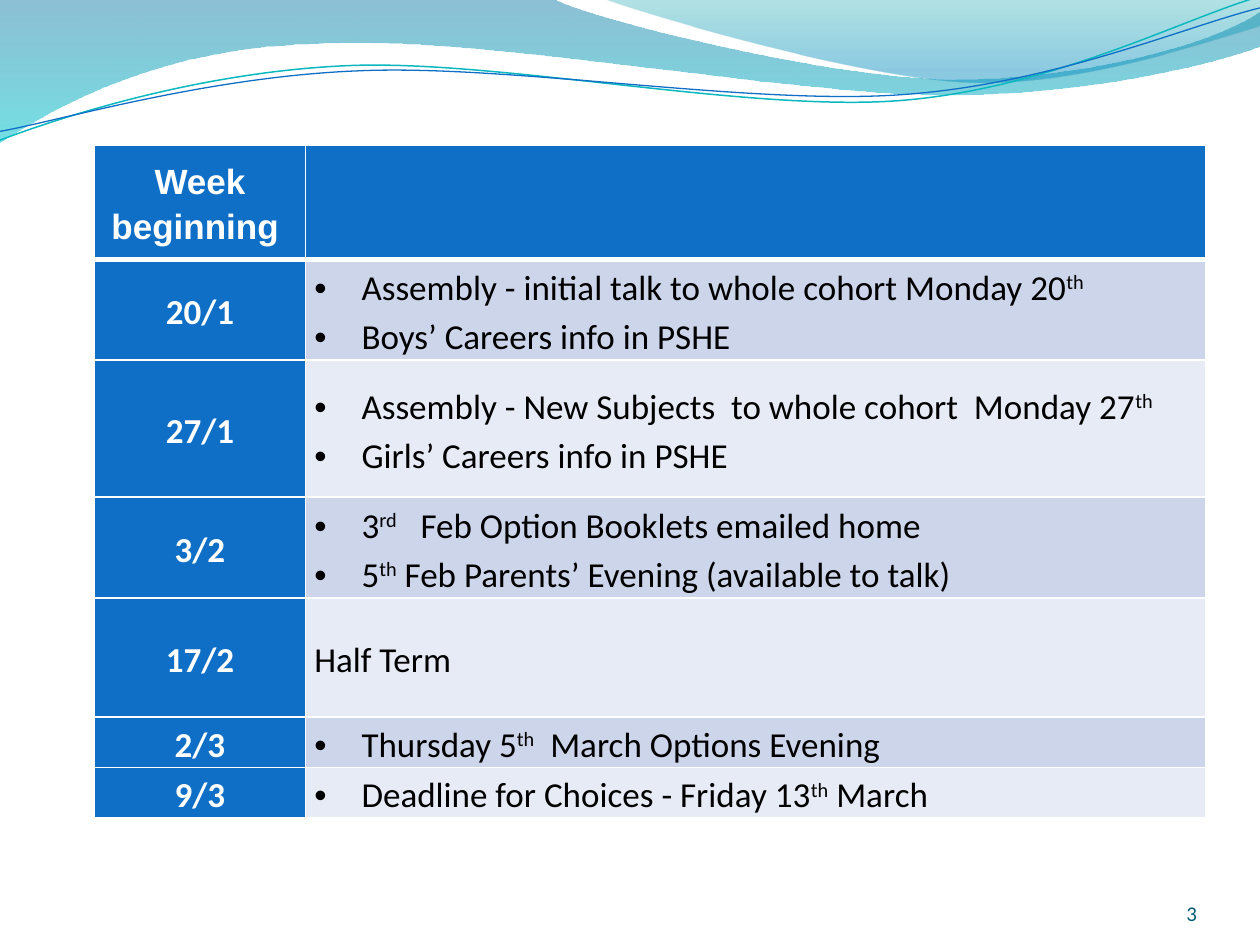
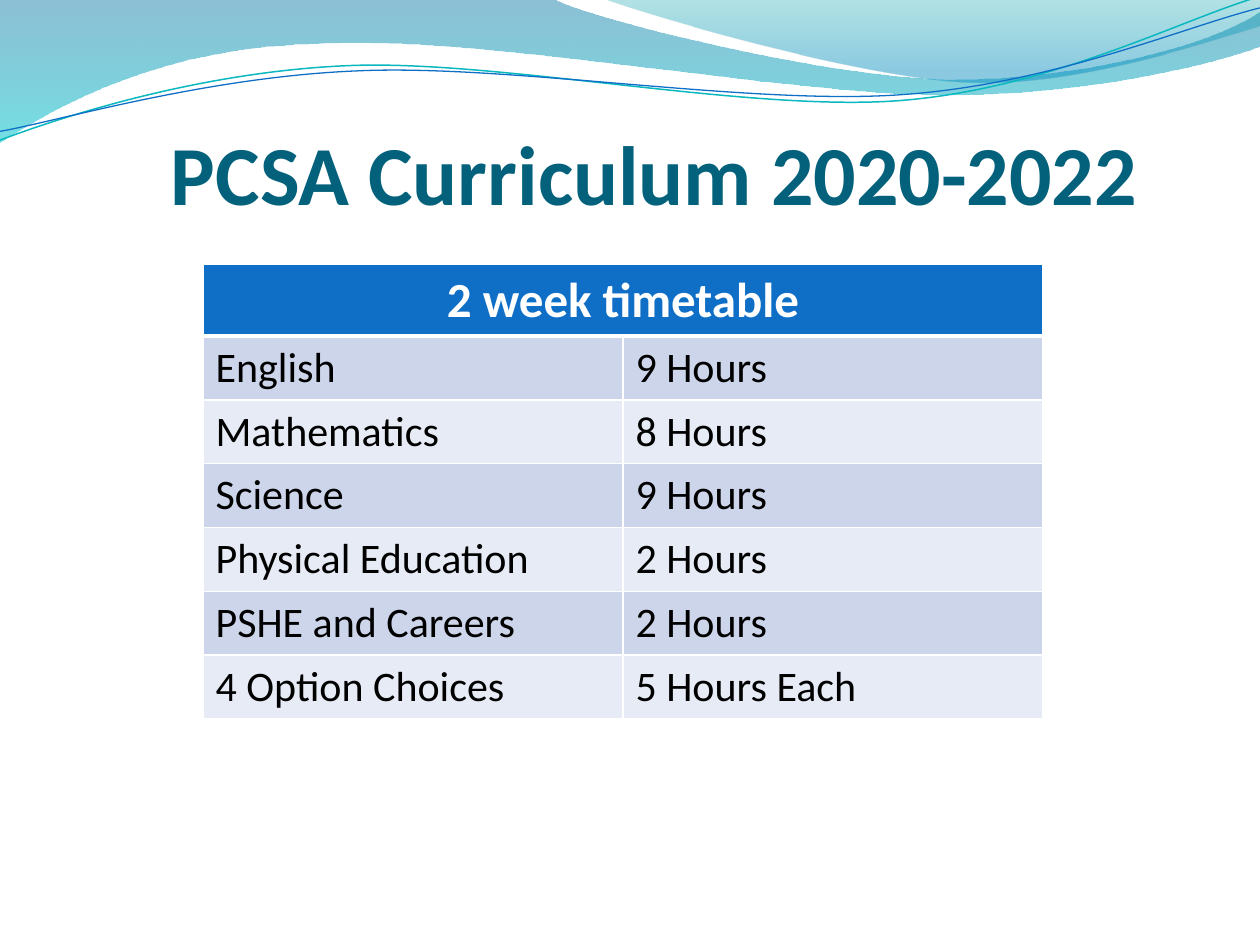
from dataclasses import dataclass
from typing import Any

from lxml.etree import SubElement
from pptx import Presentation
from pptx.dml.color import RGBColor
from pptx.enum.text import MSO_ANCHOR, PP_ALIGN
from pptx.oxml.ns import qn
from pptx.util import Pt

COLORS = {
    "blue": "0F6FC6", "teal": "0AB8BF", "white": "FFFFFF", "black": "000000",
    "title": "04617B", "number": "045D75", "odd row": "CCD5EA", "even row": "E7EBF5",
    "band top": "0074A1", "band bottom": "00C6CF",
    "crest top": "00A1A9", "crest bottom": "008BBF",
}
BULLET_INDENT = 27
LINE_TILT = 357.3

Point = tuple[float, float]


@dataclass(frozen=True)
class Stop:
    position: float
    color: str
    opacity: int


@dataclass(frozen=True)
class Wave:
    """An outline of line (one point) and cubic curve (three points) segments."""
    start: Point
    segments: list[tuple[Point, ...]]
    stops: tuple[Stop, ...] = ()
    line: str = ""
    line_width: float = 0
    rotation: float = 0


@dataclass(frozen=True)
class TextStyle:
    size: float
    color: str = "black"
    bold: bool = False
    font: str = "Calibri"
    align: PP_ALIGN = PP_ALIGN.LEFT
    spacing: float = 1.0


@dataclass(frozen=True)
class Cell:
    lines: tuple[str, ...]
    style: TextStyle
    fill: str
    bullets: bool = False


@dataclass(frozen=True)
class Grid:
    left: float
    top: float
    columns: list[float]
    rows: list[float]
    cells: list[list[Cell]]
    cell_format: dict[str, Any]


WAVES = [
    Wave((0, 0), [
        ((317, -0.5),),
        ((342.5, 12), (478, 45), (546, 45)),
        ((614, 45), (690, 27), (720, 6.5)),
        ((720.5, 26),),
        ((708, 32), (626.5, 55), (537, 54)),
        ((448, 54), (275, 20), (185, 24.5)),
        ((92.5, 26), (33, 60), (-0.5, 81.5)),
    ], stops=(Stop(0, "band top", 45), Stop(1, "band bottom", 55))),
    Wave((345, -0.5), [
        ((366.5, 8), (491, 44.5), (553.5, 47)),
        ((616.5, 49.5), (692, 23), (720, 15)),
        ((720, 0),),
    ], stops=(Stop(0, "crest top", 30), Stop(0.8, "crest bottom", 45))),
    Wave((-1.4, 63.1), [
        ((33.7, 51.7), (114.3, 29.4), (199.9, 30)),
        ((284.9, 30.5), (425.8, 67.2), (512.6, 64.8)),
        ((599.3, 62.3), (676.6, 25.9), (720.1, 15.4)),
    ], line="teal", line_width=0.85, rotation=LINE_TILT),
    Wave((-1.1, 58.1), [
        ((33.1, 53.7), (118.2, 32.6), (204.3, 33.2)),
        ((290.4, 33.2), (429.1, 63.8), (515.3, 61.4)),
        ((601.5, 59.4), (678.4, 30), (721.4, 21.5)),
    ], line="blue", line_width=0.75, rotation=LINE_TILT),
]

TITLE = TextStyle(48, "title", True, align=PP_ALIGN.CENTER)
PAGE_NUMBER = TextStyle(12, "number", align=PP_ALIGN.RIGHT)
WEEK_HEADER = TextStyle(20, "white", True, "Arial", PP_ALIGN.CENTER, 1.15)
WEEK = TextStyle(20, "white", True, align=PP_ALIGN.CENTER, spacing=1.15)
EVENT = TextStyle(20, spacing=1.15)
TIMETABLE_HEADER = TextStyle(28, "white", True, align=PP_ALIGN.CENTER)
SUBJECT = TextStyle(24)

# Text between carets is superscript.
WEEKS = [
    ("20/1", ("Assembly - initial talk to whole cohort Monday 20^th^",
              "Boys’ Careers info in PSHE")),
    ("27/1", ("Assembly - New Subjects  to whole cohort  Monday 27^th^",
              "Girls’ Careers info in PSHE")),
    ("3/2", ("3^rd^   Feb Option Booklets emailed home",
             "5^th^ Feb Parents’ Evening (available to talk)")),
    ("17/2", ("Half Term",)),
    ("2/3", ("Thursday 5^th^  March Options Evening",)),
    ("9/3", ("Deadline for Choices - Friday 13^th^ March",)),
]
SUBJECTS = [
    ("English", "9 Hours"),
    ("Mathematics", "8 Hours"),
    ("Science", "9 Hours"),
    ("Physical Education", "2 Hours"),
    ("PSHE and Careers", "2 Hours"),
    ("4 Option Choices", "5 Hours Each"),
]


def rgb(name: str) -> RGBColor:
    return RGBColor.from_string(COLORS[name])


def apply(target: Any, values: dict[str, Any]) -> None:
    for name, value in values.items():
        setattr(target, name, value)


def bend(shape: Any, segments: list[tuple[Point, ...]]) -> None:
    """Turn each run of three straight steps into one cubic curve."""
    steps = iter(list(shape._element.iter(qn("a:lnTo"))))
    for segment in segments:
        first, *others = [next(steps) for _ in segment]
        if not others:
            continue
        first.tag = qn("a:cubicBezTo")
        for step in others:
            first.append(step[0])
            step.getparent().remove(step)


def draw_wave(page: Any, wave: Wave) -> None:
    points = [point for segment in wave.segments for point in segment]
    builder = page.shapes.build_freeform(*(Pt(length) for length in wave.start))
    builder.add_line_segments([(Pt(x), Pt(y)) for x, y in points], close=bool(wave.stops))
    shape = builder.convert_to_shape()
    bend(shape, wave.segments)
    shape.rotation = wave.rotation
    shape.shadow.inherit = False
    if wave.line:
        shape.fill.background()
        shape.line.color.rgb = rgb(wave.line)
        shape.line.width = Pt(wave.line_width)
        return
    shape.line.fill.background()
    shape.fill.gradient()
    shape.fill.gradient_angle = 270
    for gradient_stop, stop in zip(shape.fill.gradient_stops, wave.stops):
        gradient_stop.color.rgb = rgb(stop.color)
        gradient_stop.position = stop.position
    gradient = shape._element.spPr.find(qn("a:gradFill"))
    for color, stop in zip(gradient.iter(qn("a:srgbClr")), wave.stops):
        SubElement(color, qn("a:alpha"), val=str(stop.opacity * 1000))


def add_bullet(para: Any) -> None:
    properties = para._p.get_or_add_pPr()
    properties.set("marL", str(Pt(BULLET_INDENT)))
    properties.set("indent", str(-Pt(BULLET_INDENT)))
    SubElement(properties, qn("a:buFont"), typeface="Arial")
    SubElement(properties, qn("a:buChar"), char="•")


def write(frame: Any, lines: tuple[str, ...], style: TextStyle, bullets: bool = False) -> None:
    for index, line in enumerate(lines):
        para = frame.add_paragraph() if index else frame.paragraphs[0]
        if bullets:
            add_bullet(para)
        apply(para, {"alignment": style.align, "line_spacing": style.spacing})
        for part, text in enumerate(line.split("^")):
            if not text:
                continue
            span = para.add_run()
            span.text = text
            apply(span.font, {"name": style.font, "size": Pt(style.size), "bold": style.bold})
            span.font.color.rgb = rgb(style.color)
            if part % 2:
                span._r.get_or_add_rPr().set("baseline", "30000")


def add_text(page: Any, area: tuple[float, ...], text: str, style: TextStyle,
             frame_format: dict[str, Any]) -> None:
    box = page.shapes.add_textbox(*(Pt(length) for length in area))
    apply(box.text_frame, {"word_wrap": True, **frame_format})
    write(box.text_frame, (text,), style)


def add_borders(cell: Any, row: int) -> None:
    """Rule a cell in white, with a heavier rule under the header row."""
    widths = {"L": 1, "R": 1, "T": 3 if row == 1 else 1, "B": 3 if row == 0 else 1}
    properties = cell._tc.get_or_add_tcPr()
    for side, width in widths.items():
        line = SubElement(properties, qn(f"a:ln{side}"), w=str(Pt(width)))
        fill = SubElement(line, qn("a:solidFill"))
        SubElement(fill, qn("a:srgbClr"), val=COLORS["white"])


def add_grid(page: Any, grid: Grid) -> Any:
    table = page.shapes.add_table(
        len(grid.rows), len(grid.columns), Pt(grid.left), Pt(grid.top),
        Pt(sum(grid.columns)), Pt(sum(grid.rows))).table
    apply(table, {"first_row": False, "horz_banding": False})
    for column, width in zip(table.columns, grid.columns):
        column.width = Pt(width)
    for row, height in zip(table.rows, grid.rows):
        row.height = Pt(height)
    for row_index, row_cells in enumerate(grid.cells):
        for column_index, content in enumerate(row_cells):
            cell = table.cell(row_index, column_index)
            add_borders(cell, row_index)
            cell.fill.solid()
            cell.fill.fore_color.rgb = rgb(content.fill)
            apply(cell, grid.cell_format)
            write(cell.text_frame, content.lines, content.style, content.bullets)
    return table


def row_fill(index: int) -> str:
    return "even row" if index % 2 else "odd row"


def add_page(deck: Any) -> Any:
    page = deck.slides.add_slide(deck.slide_layouts[6])
    for wave in WAVES:
        draw_wave(page, wave)
    return page


def add_calendar_page(deck: Any) -> None:
    page = add_page(deck)
    no_margins = {f"margin_{side}": 0 for side in ("left", "right", "top", "bottom")}
    add_text(page, (624, 500, 60, 29), "3", PAGE_NUMBER,
             {"vertical_anchor": MSO_ANCHOR.BOTTOM, **no_margins})
    cells = [[Cell(("Week beginning ",), WEEK_HEADER, "blue"), Cell((), EVENT, "blue")]]
    for index, (week, events) in enumerate(WEEKS):
        cells.append([Cell((week,), WEEK, "blue"),
                      Cell(events, EVENT, row_fill(index), events != ("Half Term",))])
    add_grid(page, Grid(
        54, 83, [120.6, 514.4], [65.2, 57.6, 78.2, 57.8, 68, 28.8, 28.8], cells,
        {"vertical_anchor": MSO_ANCHOR.MIDDLE, "margin_left": Pt(5), "margin_right": Pt(5),
         "margin_top": 0, "margin_bottom": 0}))


def add_curriculum_page(deck: Any) -> None:
    page = add_page(deck)
    add_text(page, (77, 66, 594, 396), "PCSA Curriculum 2020-2022", TITLE, {})
    cells = [[Cell(("2 week timetable",), TIMETABLE_HEADER, "blue"),
              Cell((), TIMETABLE_HEADER, "blue")]]
    for index, subject_row in enumerate(SUBJECTS):
        cells.append([Cell((text,), SUBJECT, row_fill(index)) for text in subject_row])
    table = add_grid(page, Grid(116, 151, [240] * 2, [41] + [36.5] * len(SUBJECTS), cells, {}))
    table.cell(0, 0).merge(table.cell(0, 1))


def main() -> None:
    deck = Presentation()
    apply(deck, {"slide_width": Pt(720), "slide_height": Pt(540)})
    add_calendar_page(deck)
    add_curriculum_page(deck)
    deck.save("out.pptx")


if __name__ == "__main__":
    main()
